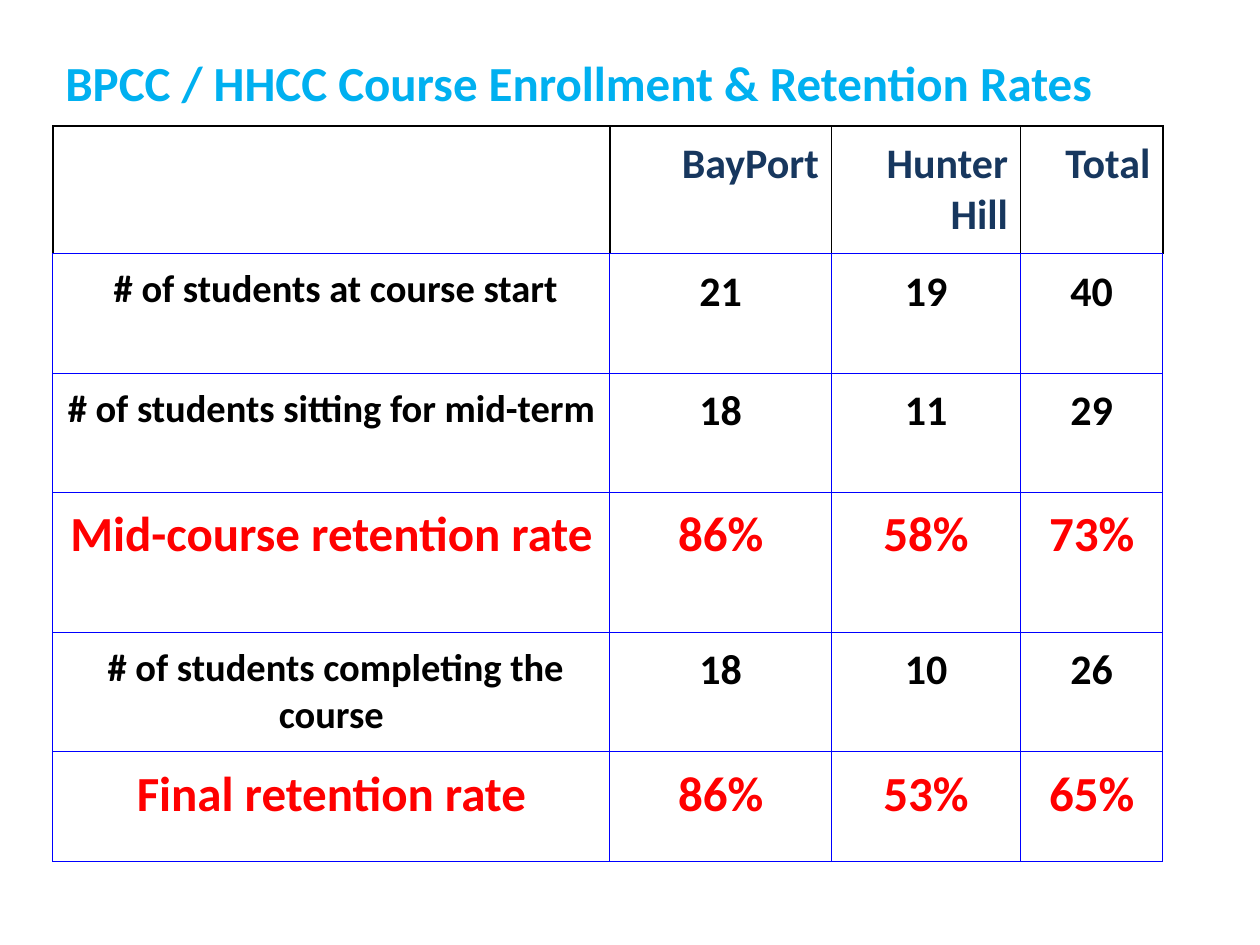
from lxml import etree
from pptx import Presentation
from pptx.dml.color import RGBColor
from pptx.enum.text import MSO_ANCHOR, PP_ALIGN
from pptx.oxml.ns import qn
from pptx.util import Inches, Pt

LEFT, CENTER, RIGHT = PP_ALIGN.LEFT, PP_ALIGN.CENTER, PP_ALIGN.RIGHT
TOP = MSO_ANCHOR.TOP

SKY = RGBColor(0x00, 0xB0, 0xF0)
NAVY = RGBColor(0x17, 0x37, 0x5E)
BLACK = RGBColor(0x00, 0x00, 0x00)
RED = RGBColor(0xFF, 0x00, 0x00)
BLUE = RGBColor(0x00, 0x00, 0xFF)

FONT = "Calibri"
BLANK_LAYOUT = 6
CELL_MARGIN = Inches(0.1)

# Box of each region: left, top, width, height in inches
TITLE_BOX = (0.42, 0.37, 9.42, 0.91)
TABLE_BOX = (0.42, 1, 8.81, 5.79)
COLUMN_WIDTHS = (4.42, 1.76, 1.5, 1.13)
ROW_HEIGHTS = (0.96, 0.94, 0.94, 1.1, 0.94, 0.86)

TITLE = "BPCC / HHCC Course Enrollment & Retention Rates"
ROWS = (
    ("", "BayPort", "Hunter Hill", "Total"),
    (" # of students at course start", "21", "19", "40"),
    ("# of students sitting for mid-term", "18", "11", "29"),
    ("Mid-course retention rate", "86%", "58%", "73%"),
    (" # of students completing the course", "18", "10", "26"),
    ("Final retention rate", "86%", "53%", "65%"),
)


def write_text(text_frame, text, size, color, align=LEFT):
    """Fill a text frame with one bold paragraph."""
    text_frame.word_wrap = True
    paragraph = text_frame.paragraphs[0]
    paragraph.alignment = align
    run = paragraph.add_run()
    run.text = text
    run.font.name = FONT
    run.font.size = Pt(size)
    run.font.bold = True
    run.font.color.rgb = color


def set_borders(cell, sides):
    """Draw cell borders; sides maps L, R, T, B to (color, points)."""
    properties = cell._tc.get_or_add_tcPr()
    for index, side in enumerate("LRTB"):
        color, width = sides[side]
        line = etree.Element(qn(f"a:ln{side}"), w=str(Pt(width)))
        fill = etree.SubElement(line, qn("a:solidFill"))
        etree.SubElement(fill, qn("a:srgbClr"), val=str(color))
        properties.insert(index, line)


def text_format(row, column):
    """Choose the format of a cell from its row and column."""
    if row == 0:
        return {"size": 24, "color": NAVY, "align": RIGHT}
    if "rate" in ROWS[row][0]:
        return {"size": 28, "color": RED, "align": CENTER}
    return {"size": 22 if column == 0 else 24, "color": BLACK, "align": CENTER}


def add_title(slide, box):
    text_box = slide.shapes.add_textbox(*map(Inches, box))
    write_text(text_box.text_frame, TITLE, size=28, color=SKY)


def add_retention_table(slide, box):
    frame = slide.shapes.add_table(len(ROWS), len(COLUMN_WIDTHS), *map(Inches, box))
    table = frame.table
    table.first_row = table.horz_banding = False

    # Grid, scaled to the box
    for column, width in zip(table.columns, COLUMN_WIDTHS):
        column.width = Inches(box[2] * width / sum(COLUMN_WIDTHS))
    for row, height in zip(table.rows, ROW_HEIGHTS):
        row.height = Inches(box[3] * height / sum(ROW_HEIGHTS))

    # Cells: black frame around the header, blue grid below it
    body_borders = dict.fromkeys("LRTB", (BLUE, 0.75))
    header_borders = body_borders | dict.fromkeys("LRT", (BLACK, 1))
    for row, texts in enumerate(ROWS):
        for column, text in enumerate(texts):
            cell = table.cell(row, column)
            cell.fill.background()
            cell.vertical_anchor = TOP
            cell.margin_left = cell.margin_right = CELL_MARGIN
            cell.margin_top = cell.margin_bottom = CELL_MARGIN
            set_borders(cell, body_borders if row else header_borders)
            if text:
                write_text(cell.text_frame, text, **text_format(row, column))


def main():
    presentation = Presentation()
    presentation.slide_width = Inches(10)
    presentation.slide_height = Inches(7.5)
    slide = presentation.slides.add_slide(presentation.slide_layouts[BLANK_LAYOUT])
    add_retention_table(slide, TABLE_BOX)
    add_title(slide, TITLE_BOX)
    presentation.save("out.pptx")


if __name__ == "__main__":
    main()
